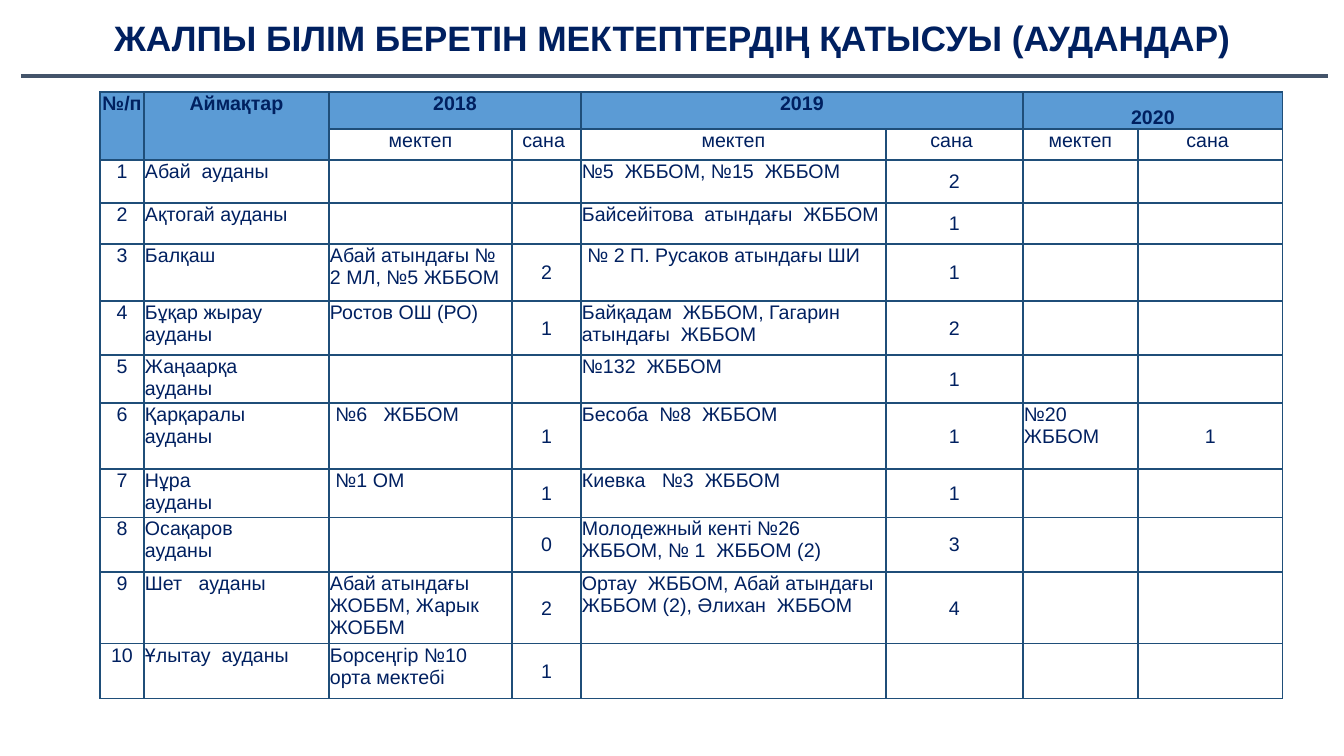
from dataclasses import dataclass

from lxml import etree
from pptx import Presentation
from pptx import util as u
from pptx.dml.color import RGBColor
from pptx.enum import shapes, text
from pptx.oxml import ns

PX = 9071  # EMU per px
FONT = "Arial"
NAVY = RGBColor(0x00, 0x20, 0x60)
SLATE = RGBColor(0x44, 0x54, 0x6A)
HEADER_BLUE = RGBColor(0x5B, 0x9B, 0xD5)
BORDER_BLUE = RGBColor(0x1F, 0x4E, 0x79)
WHITE = RGBColor(0xFF, 0xFF, 0xFF)

TITLE = "ЖАЛПЫ БІЛІМ БЕРЕТІН МЕКТЕПТЕРДІҢ ҚАТЫСУЫ (АУДАНДАР)"
TABLE_LEFT, TABLE_TOP = 100, 92
COLUMN_WIDTHS = [44, 185, 183, 69, 305, 137, 115, 145]
HEADER_HEIGHTS = [37, 31]
COUNT_COLUMNS = {3, 5, 7}
LEFT, CENTER = text.PP_ALIGN.LEFT, text.PP_ALIGN.CENTER
TOP, MIDDLE, BOTTOM = (text.MSO_ANCHOR.TOP, text.MSO_ANCHOR.MIDDLE,
                       text.MSO_ANCHOR.BOTTOM)


@dataclass(frozen=True)
class Heading:
    label: str
    column: int
    row_span: int = 1
    column_span: int = 1
    anchor: text.MSO_ANCHOR = TOP


@dataclass(frozen=True)
class District:
    height: int
    name: str
    schools_2018: str = ""
    count_2018: str = ""
    schools_2019: str = ""
    count_2019: str = ""
    schools_2020: str = ""
    count_2020: str = ""

    def values(self) -> list[str]:
        return [self.name, self.schools_2018, self.count_2018, self.schools_2019,
                self.count_2019, self.schools_2020, self.count_2020]


HEADINGS = [
    Heading("№/п", 0, row_span=2),
    Heading("Аймақтар", 1, row_span=2),
    Heading("2018", 2, column_span=2),
    Heading("2019", 4, column_span=2),
    Heading("2020", 6, column_span=2, anchor=BOTTOM),
]

DISTRICTS = [
    District(43, "Абай  ауданы", "", "", "№5  ЖББОМ, №15  ЖББОМ", "2"),
    District(41, "Ақтогай ауданы", "", "", "Байсейітова  атындағы  ЖББОМ", "1"),
    District(57, "Балқаш", "Абай атындағы № 2 МЛ, №5 ЖББОМ", "2",
             " № 2 П. Русаков атындағы ШИ", "1"),
    District(54, "Бұқар жырау\nауданы", "Ростов ОШ (РО)", "1",
             "Байқадам  ЖББОМ, Гагарин атындағы  ЖББОМ", "2"),
    District(47, "Жаңаарқа\nауданы", "", "", "№132  ЖББОМ", "1"),
    District(66, "Қарқаралы\nауданы", " №6   ЖББОМ", "1",
             "Бесоба  №8  ЖББОМ", "1", "№20  ЖББОМ", "1"),
    District(48, "Нұра\nауданы", " №1 ОМ", "1", "Киевка   №3  ЖББОМ", "1"),
    District(55, "Осақаров\nауданы", "", "0",
             "Молодежный кенті №26  ЖББОМ, № 1  ЖББОМ (2)", "3"),
    District(70, "Шет   ауданы", "Абай атындағы ЖОББМ, Жарык ЖОББМ", "2",
             "Ортау  ЖББОМ, Абай атындағы  ЖББОМ (2), Әлихан  ЖББОМ", "4"),
    District(55, "Ұлытау  ауданы", "Борсеңгір №10 орта мектебі", "1"),
]


def px(length: int) -> u.Emu:
    return u.Emu(length * PX)


def write(frame, content: str, size: float, bold: bool,
          alignment: text.PP_ALIGN) -> None:
    frame.text = content
    for paragraph in frame.paragraphs:
        paragraph.alignment = alignment
        for run in paragraph.runs:
            run.font.name = FONT
            run.font.size = u.Pt(size)
            run.font.bold = bold
            run.font.color.rgb = NAVY


def add_borders(cell) -> None:
    """Outline all four sides; the lines must precede the fill in tcPr."""
    properties = cell._tc.get_or_add_tcPr()
    for index, side in enumerate(("lnL", "lnR", "lnT", "lnB")):
        line = etree.Element(ns.qn(f"a:{side}"), w=str(u.Pt(1)))
        fill = etree.SubElement(line, ns.qn("a:solidFill"))
        etree.SubElement(fill, ns.qn("a:srgbClr"), val=str(BORDER_BLUE))
        properties.insert(index, line)


def style_cell(cell, fill: RGBColor) -> None:
    cell.margin_left = cell.margin_right = cell.margin_top = px(1)
    cell.margin_bottom = 0
    cell.fill.solid()
    cell.fill.fore_color.rgb = fill
    add_borders(cell)


def fill_cell(cell, content: str, bold: bool = False,
              alignment: text.PP_ALIGN = CENTER,
              anchor: text.MSO_ANCHOR = TOP) -> None:
    write(cell.text_frame, content, 14, bold, alignment)
    cell.vertical_anchor = anchor


def add_title(slide) -> None:
    title = slide.shapes.add_textbox(px(93), px(21), px(1159), px(39))
    frame = title.text_frame
    frame.word_wrap = True
    frame.vertical_anchor = MIDDLE
    write(frame, TITLE, 25.2, True, CENTER)
    frame.paragraphs[0].line_spacing = 0.9


def add_title_rule(slide) -> None:
    rule = slide.shapes.add_connector(shapes.MSO_CONNECTOR.STRAIGHT,
                                      px(21), px(76), px(1328), px(76))
    rule.line.color.rgb = SLATE
    rule.line.width = u.Pt(2.25)
    etree.SubElement(rule._element.spPr, ns.qn("a:effectLst"))


def add_participation_table(slide) -> None:
    heights = HEADER_HEIGHTS + [district.height for district in DISTRICTS]
    table = slide.shapes.add_table(
        len(heights), len(COLUMN_WIDTHS), px(TABLE_LEFT), px(TABLE_TOP),
        px(sum(COLUMN_WIDTHS)), px(sum(heights))).table
    for column, width in zip(table.columns, COLUMN_WIDTHS):
        column.width = px(width)
    for row, height in zip(table.rows, heights):
        row.height = px(height)
    for row_index, row in enumerate(table.rows):
        for column, cell in enumerate(row.cells):
            in_header = row_index == 0 or (row_index == 1 and column < 2)
            style_cell(cell, HEADER_BLUE if in_header else WHITE)

    for heading in HEADINGS:
        cell = table.cell(0, heading.column)
        cell.merge(table.cell(heading.row_span - 1,
                              heading.column + heading.column_span - 1))
        fill_cell(cell, heading.label, bold=True, anchor=heading.anchor)
    for column in range(2, len(COLUMN_WIDTHS)):
        fill_cell(table.cell(1, column),
                  "сана " if column in COUNT_COLUMNS else "мектеп")

    for number, district in enumerate(DISTRICTS, start=1):
        row_index = number + len(HEADER_HEIGHTS) - 1
        fill_cell(table.cell(row_index, 0), str(number))
        for column, value in enumerate(district.values(), start=1):
            is_count = column in COUNT_COLUMNS
            fill_cell(table.cell(row_index, column), value,
                      alignment=CENTER if is_count else LEFT,
                      anchor=MIDDLE if is_count else TOP)


def main() -> None:
    presentation = Presentation()
    presentation.slide_width, presentation.slide_height = px(1344), px(756)
    slide = presentation.slides.add_slide(presentation.slide_layouts[6])
    add_title(slide)
    add_title_rule(slide)
    add_participation_table(slide)
    presentation.save("out.pptx")


if __name__ == "__main__":
    main()
